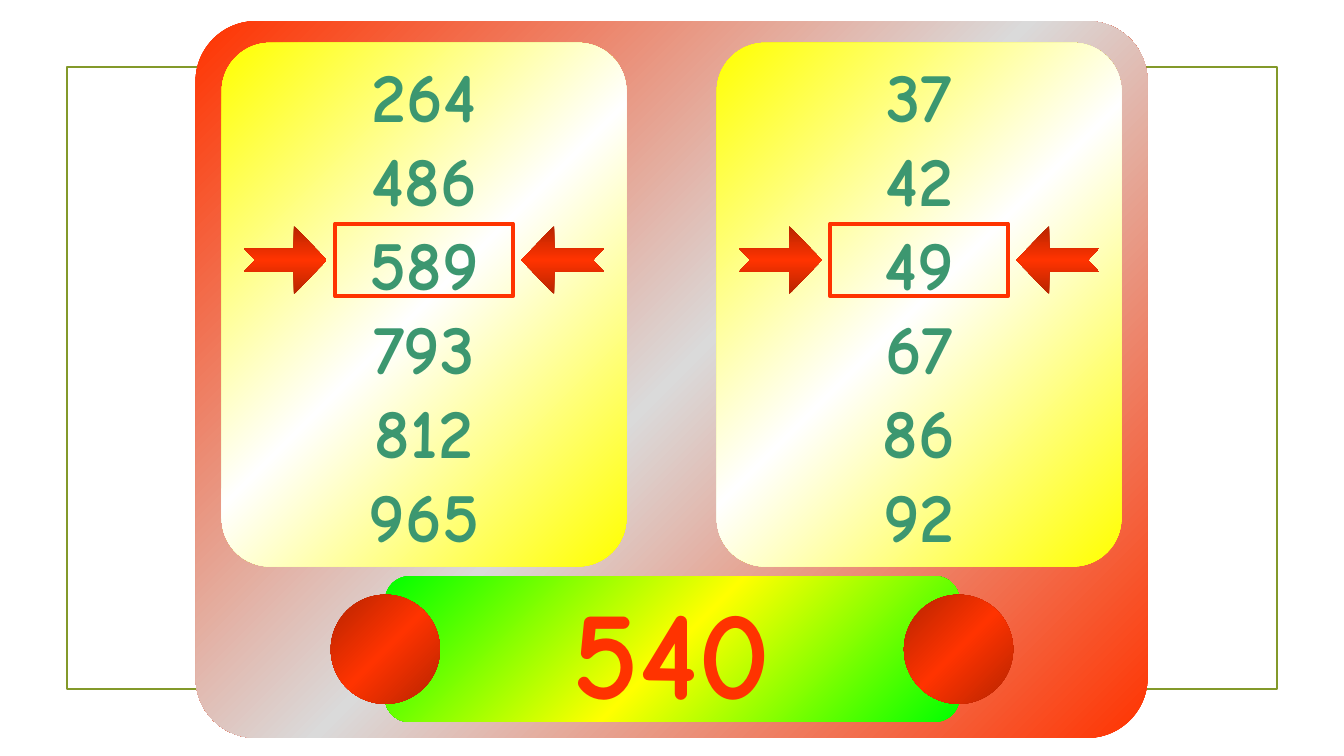
"""Build a number-machine slide with two digit cards and an answer bar."""
from copy import deepcopy
from pptx import Presentation
from pptx.dml.color import RGBColor
from pptx.enum.shapes import MSO_SHAPE
from pptx.enum.text import MSO_AUTO_SIZE, PP_ALIGN
from pptx.util import Pt

CARDS = [
    (162, ["264", "486", "589", "793", "812", "965"]),
    (221.76, ["37", "42", "49", "67", "86", "92"]),
]
ANSWER = "540"
FONT = "Comic Neue"
RED, DARK, GREY = "FF3300", "B62400", "DADADA"
GREEN, YELLOW, WHITE = "00FF00", "FFFF00", "FFFFFF"
TEAL, OLIVE = "3C9770", "83992A"

WIDE, HIGH = 960, 540
LEFT, TOP, CARD, TALL, STEP = 158.4, 30.6, 289, 374, 353.6
ARROW, BOX = 59, 126.72
MID = 185.76
BALL = 78


def color(code):
    return RGBColor.from_string(code)


def draw(kind, x, y, w, h, adjust=()):
    shape = slide.shapes.add_shape(kind, Pt(x), Pt(y), Pt(w), Pt(h))
    shape.shadow.inherit = False
    shape.fill.background()
    shape.line.fill.background()
    for i, value in enumerate(adjust):
        shape.adjustments[i] = value
    return shape


def blend(shape, edge, core, angle=315):
    fill = shape.fill
    fill.gradient()
    fill.gradient_angle = angle
    stops = next(shape._element.spPr.iter("{*}gsLst"))
    stops.append(deepcopy(stops[0]))
    for stop, place, code in zip(fill.gradient_stops, (0, 0.5, 1), (edge, core, edge)):
        stop.position = place
        stop.color.rgb = color(code)


def outline(shape, code, width):
    shape.line.color.rgb = color(code)
    shape.line.width = Pt(width)


def write(lines, x, y, w, h, size, code):
    frame = slide.shapes.add_textbox(Pt(x), Pt(y), Pt(w), Pt(h)).text_frame
    frame.word_wrap = True
    frame.auto_size = MSO_AUTO_SIZE.SHAPE_TO_FIT_TEXT
    for i, line in enumerate(lines):
        para = frame.add_paragraph() if i else frame.paragraphs[0]
        para.alignment = PP_ALIGN.CENTER
        run = para.add_run()
        run.text = line
        run.font.name = FONT
        run.font.size = Pt(size)
        run.font.bold = True
        run.font.color.rgb = color(code)


deck = Presentation()
deck.slide_width, deck.slide_height = Pt(WIDE), Pt(HIGH)
slide = deck.slides.add_slide(deck.slide_layouts[6])

outline(draw(MSO_SHAPE.RECTANGLE, 48, 48, 864, 444), OLIVE, 1.25)
panel = draw(MSO_SHAPE.ROUNDED_RECTANGLE, 139.68, 15.12, 680, 512, [0.084])
blend(panel, RED, GREY)
bar = draw(MSO_SHAPE.ROUNDED_RECTANGLE, 275, 411.6, 410.4, 104, [0.167])
blend(bar, GREEN, YELLOW)
write([ANSWER], 238.5, 406, 483, 115.2, 90, RED)

for i, (width, digits) in enumerate(CARDS):
    x = LEFT + i * STEP
    mid = x + CARD / 2
    card = draw(MSO_SHAPE.ROUNDED_RECTANGLE, x, TOP, CARD, TALL, [0.119])
    blend(card, YELLOW, WHITE)
    write(digits, mid - width / 2, 33.84, width, 367.2, 50, TEAL)
    box = draw(MSO_SHAPE.RECTANGLE, mid - BOX / 2, MID - 26, BOX, 52)
    outline(box, RED, 3)
    for side, turn in ((-1, 0), (1, 180)):
        left = mid + side * 99 - ARROW / 2
        arrow = draw(MSO_SHAPE.NOTCHED_RIGHT_ARROW, left, MID - 24.5, ARROW, 49, [0.337, 0.477])
        arrow.rotation = turn
        blend(arrow, DARK, RED, 270)

for side in (-1, 1):
    left = WIDE / 2 + side * 204.7 - BALL / 2
    blend(draw(MSO_SHAPE.OVAL, left, 424.8, BALL, BALL), DARK, RED)

deck.save("out.pptx")
